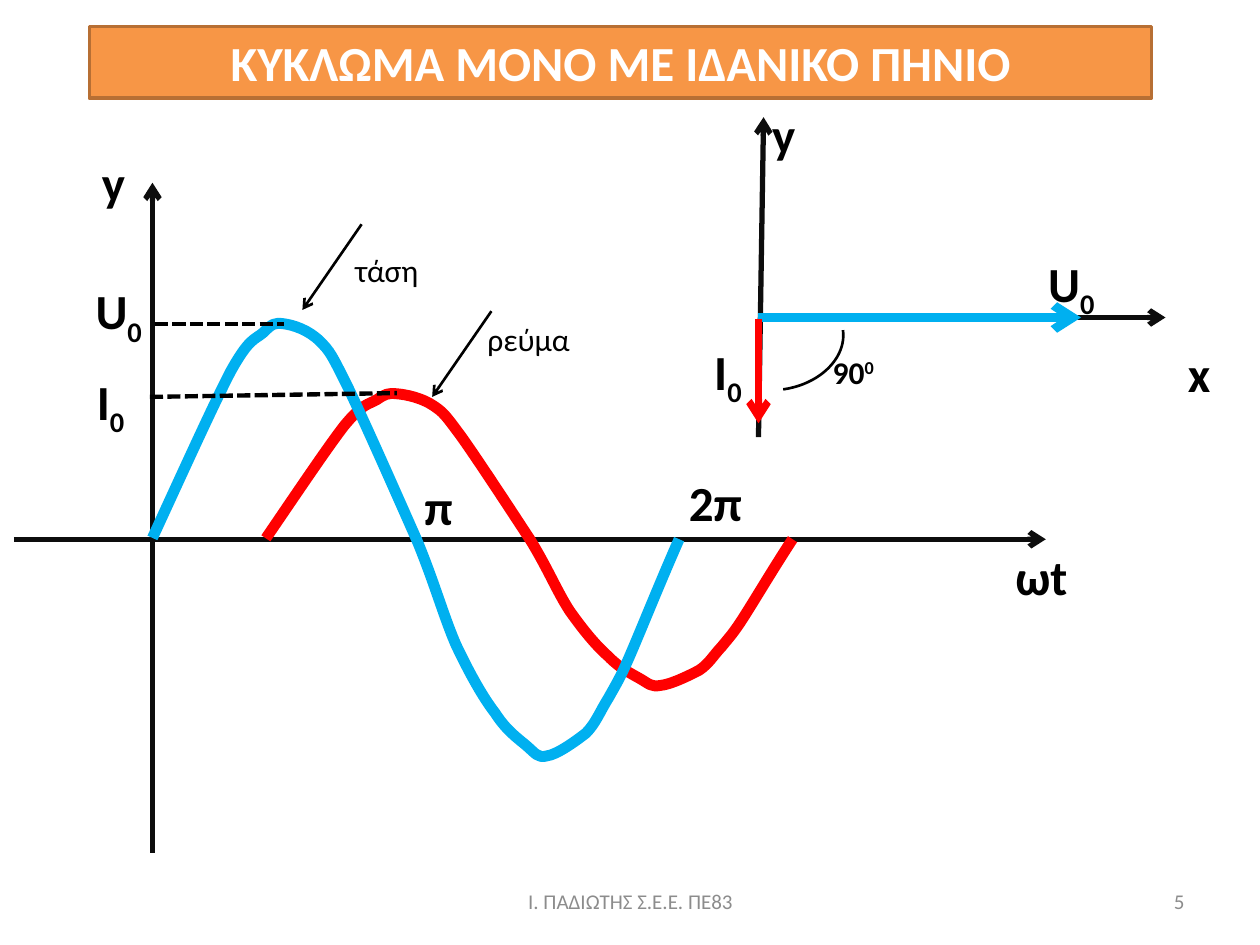
from lxml.etree import SubElement
from pptx import Presentation
from pptx.dml.color import RGBColor
from pptx.enum.shapes import MSO_CONNECTOR, MSO_SHAPE
from pptx.enum.text import MSO_ANCHOR as Anchor, MSO_AUTO_SIZE as AutoSize, PP_ALIGN as Align
from pptx.oxml.ns import qn
from pptx.util import Cm, Pt

# Content; positions in inches
BLACK, AXIS, RED, BLUE, GREY = "000000", "0D0D0D", "FF0000", "00B0F0", "8C8C8C"
TITLE = "ΚΥΚΛΩΜΑ ΜΟΝΟ ΜΕ ΙΔΑΝΙΚΟ ΠΗΝΙΟ"
FOOTERS = [("Ι. ΠΑΔΙΩΤΗΣ Σ.Ε.Ε. ΠΕ83", (3.42, 6.95, 3.17, 0.4), Align.CENTER),
           ("5", (7.17, 6.95, 2.33, 0.4), Align.RIGHT)]

# from, to, colour, width, arrowhead
AXES = [((1.21, 6.77), (1.21, 1.45), AXIS, 3, True),
        ((0.11, 4.28), (8.3, 4.28), AXIS, 3, True)]
PEAK_LEVELS = [((1.23, 2.57), (2.25, 2.57), BLACK, 2.5, False),
               ((1.19, 3.15), (3.15, 3.12), BLACK, 2.5, False)]
POINTERS_AND_PHASORS = [
    ((2.87, 1.78), (2.4, 2.46), BLACK, 1.5, True),
    ((3.9, 2.47), (3.43, 3.15), BLACK, 1.5, True),
    ((6.02, 3.47), (6.06, 0.93), AXIS, 3, True),
    ((6.02, 2.52), (9.25, 2.52), AXIS, 3, True),
    ((6.02, 2.52), (8.58, 2.52), BLUE, 5, True),
    ((6.02, 2.53), (6.02, 3.36), RED, 4, True)]

# Voltage wave: Bezier points as (offset from its start, height above the axis)
WAVE = [(0, 0.01),
        (0.24, 0.53), (0.48, 1.06), (0.62, 1.33), (0.77, 1.6), (0.81, 1.58), (0.88, 1.64),
        (0.95, 1.71), (0.97, 1.72), (1.04, 1.71), (1.12, 1.7), (1.24, 1.66), (1.33, 1.57),
        (1.41, 1.49), (1.42, 1.47), (1.55, 1.21), (1.68, 0.94), (1.95, 0.33), (2.1, -0.01),
        (2.24, -0.35), (2.31, -0.61), (2.41, -0.84), (2.52, -1.07), (2.62, -1.25), (2.72, -1.38),
        (2.81, -1.52), (2.9, -1.58), (2.97, -1.64), (3.04, -1.7), (3.06, -1.74), (3.13, -1.72),
        (3.21, -1.71), (3.35, -1.61), (3.44, -1.54), (3.52, -1.46), (3.55, -1.37), (3.62, -1.26),
        (3.68, -1.15), (3.71, -1.11), (3.8, -0.9), (3.89, -0.69), (4.03, -0.34), (4.18, 0)]
ZERO_LEVEL = 4.28
# start, amplitude relative to the voltage, colour
CURVES = [(2.11, 0.675, RED), (1.21, 1, BLUE)]

# runs as (text, baseline %), box, size, bold, wrap
U0, I0 = [("U", 0), ("0", -25)], [("I", 0), ("0", -25)]
LABELS = [([("y", 0)], (6.03, 0.78, 0.45, 0.57), 28, True, True),
          ([("y", 0)], (0.71, 1.16, 0.45, 0.57), 28, True, True),
          ([("ωt", 0)], (7.96, 4.29, 0.62, 0.57), 28, True, False),
          ([("x", 0)], (9.33, 2.68, 0.39, 0.57), 28, True, False),
          (U0, (0.66, 2.18, 0.71, 0.57), 28, True, True),
          (I0, (0.67, 2.9, 0.71, 0.57), 28, True, True),
          (U0, (8.22, 1.96, 0.71, 0.57), 28, True, True),
          (I0, (5.57, 2.66, 0.71, 0.57), 28, True, True),
          ([("π", 0)], (3.27, 3.73, 0.87, 0.57), 28, True, True),
          ([("2π", 0)], (5.37, 3.7, 0.87, 0.57), 28, True, True),
          ([("τάση", 0)], (2.72, 1.94, 0.71, 0.4), 18, False, True),
          ([("ρεύμα", 0)], (3.77, 2.49, 0.86, 0.4), 18, False, False),
          ([("90", 0), ("0", 30)], (6.51, 2.75, 0.89, 0.4), 18, True, True)]


def inches(*values):
    return [Cm(value * 2.54) for value in values]


def color(code):
    return RGBColor.from_string(code)


def set_line(shape, code, width):
    shape.line.color.rgb = color(code)
    shape.line.width = Pt(width)


def write(shape, runs, size, code, bold=False, align=Align.LEFT):
    paragraph = shape.text_frame.paragraphs[0]
    paragraph.alignment = align
    for text, baseline in runs:
        run = paragraph.add_run()
        run.text = text
        run.font.name, run.font.size, run.font.bold = "Calibri", Pt(size), bold
        run.font.color.rgb = color(code)
        if baseline:
            run.font._element.set("baseline", str(baseline * 1000))


def add_lines(lines, dashed=False):
    for start, end, code, width, arrow in lines:
        line = shapes.add_connector(MSO_CONNECTOR.STRAIGHT, *inches(*start, *end))
        set_line(line, code, width)
        outline = line.line._get_or_add_ln()
        if dashed:
            SubElement(outline, qn("a:prstDash"), val="sysDash")
        if arrow:
            SubElement(outline, qn("a:tailEnd"), type="arrow")
        SubElement(line._element.spPr, qn("a:effectLst"))


def add_curve(start, amplitude, code):
    points = [inches(start + x, ZERO_LEVEL - amplitude * y) for x, y in WAVE]
    builder = shapes.build_freeform(*points[0])
    builder.add_line_segments(points[1:], close=False)
    curve = builder.convert_to_shape()
    curve.shadow.inherit = False
    curve.fill.background()
    set_line(curve, code, 6.25)
    # Every three straight segments become one Bezier segment
    segments = list(curve._element.iter(qn("a:lnTo")))
    outline = segments[0].getparent()
    for first in range(0, len(segments), 3):
        bezier = SubElement(outline, qn("a:cubicBezTo"))
        for segment in segments[first:first + 3]:
            bezier.append(segment[0])
            outline.remove(segment)


prs = Presentation()
prs.slide_width, prs.slide_height = inches(10, 7.5)
shapes = prs.slides.add_slide(prs.slide_layouts[6]).shapes

# Wave diagram, pointers and phasors
add_lines(AXES)
for curve_spec in CURVES:
    add_curve(*curve_spec)
add_lines(PEAK_LEVELS, dashed=True)
add_lines(POINTERS_AND_PHASORS)

# Title bar
title = shapes.add_shape(MSO_SHAPE.RECTANGLE, *inches(0.71, 0.21, 8.43, 0.57))
title.shadow.inherit = False
title.fill.solid()
title.fill.fore_color.rgb = color("F79646")
set_line(title, "B76F34", 2)
write(title, [(TITLE, 0)], 28, "FFFFFF", True, Align.CENTER)

# Phase angle
angle = shapes.add_shape(MSO_SHAPE.ARC, *inches(5.76, 2.16, 0.8, 1.07))
angle.rotation = 82
angle.shadow.inherit = False
angle.fill.background()
set_line(angle, BLACK, 1.5)

# Labels
for runs, box, size, bold, wrap in LABELS:
    label = shapes.add_textbox(*inches(*box))
    label.text_frame.word_wrap = wrap
    label.text_frame.auto_size = AutoSize.SHAPE_TO_FIT_TEXT
    write(label, runs, size, BLACK, bold)

# Footer and page number
for text, box, align in FOOTERS:
    footer = shapes.add_textbox(*inches(*box))
    footer.text_frame.word_wrap = True
    footer.text_frame.vertical_anchor = Anchor.MIDDLE
    write(footer, [(text, 0)], 12, GREY, align=align)

prs.save("out.pptx")
